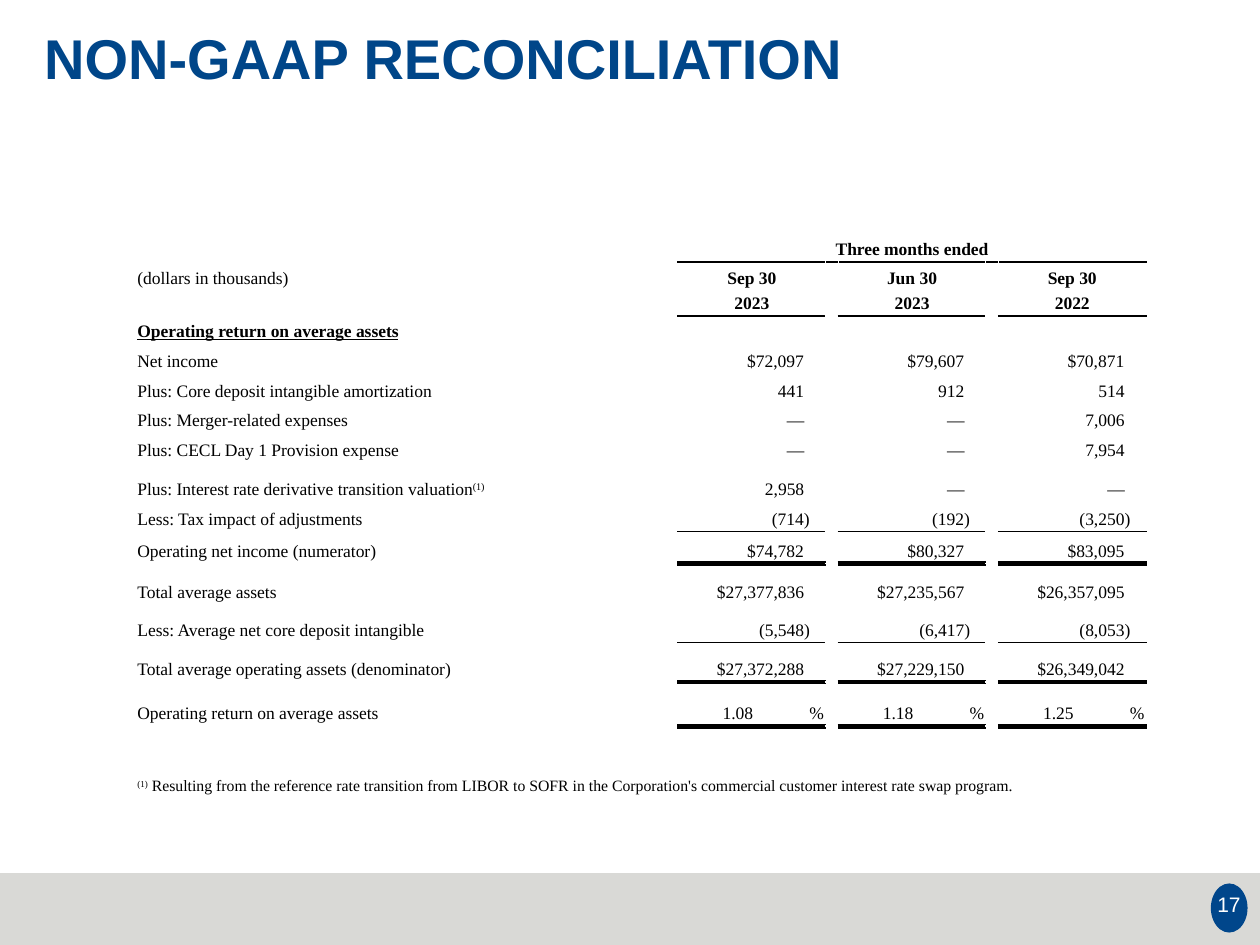
from lxml.etree import SubElement
from pptx import Presentation
from pptx.dml.color import RGBColor
from pptx.enum.shapes import MSO_SHAPE as Shape
from pptx.enum.text import MSO_ANCHOR as Anchor, PP_ALIGN as Align
from pptx.oxml.ns import qn
from pptx.util import Cm, Pt

# ---- Content: label, superscript mark, values, rule below, row height (cm)
TITLE = "NON-GAAP RECONCILIATION"
PAGE = "17"
PERIOD = "Three months ended"
UNITS = "(dollars in thousands)"
SECTION = "Operating return on average assets"
MARK = "(1)"
NOTE = (" Resulting from the reference rate transition from LIBOR to SOFR in the "
        "Corporation's commercial customer interest rate swap program.")
HEAD, SUM, TOTAL = 1, 0.75, 3  # rule widths in points
ROWS = [
    ("", "", [], HEAD, 0.56),
    (UNITS, "", ["Sep 30", "Jun 30", "Sep 30"], 0, 0.58),
    ("", "", ["2023", "2023", "2022"], HEAD, 0.51),
    (SECTION, "", [], 0, 0.56),
    ("Net income", "", ["$72,097", "$79,607", "$70,871"], 0, 0.6),
    ("Plus: Core deposit intangible amortization", "", ["441", "912", "514"], 0, 0.6),
    ("Plus: Merger-related expenses", "", ["—", "—", "7,006"], 0, 0.6),
    ("Plus: CECL Day 1 Provision expense", "", ["—", "—", "7,954"], 0, 0.6),
    ("Plus: Interest rate derivative transition valuation", MARK,
     ["2,958", "—", "—"], 0, 0.79),
    ("Less: Tax impact of adjustments", "", ["(714)", "(192)", "(3,250)"], SUM, 0.6),
    ("Operating net income (numerator)", "", ["$74,782", "$80,327", "$83,095"], TOTAL, 0.64),
    ("", "", [], 0, 0.28),
    ("Total average assets", "", ["$27,377,836", "$27,235,567", "$26,357,095"], 0, 0.56),
    ("Less: Average net core deposit intangible", "",
     ["(5,548)", "(6,417)", "(8,053)"], SUM, 0.76),
    ("Total average operating assets (denominator)", "",
     ["$27,372,288", "$27,229,150", "$26,349,042"], TOTAL, 0.79),
    ("", "", [], 0, 0.28),
    ("Operating return on average assets", "", ["1.08%", "1.18%", "1.25%"], TOTAL, 0.61),
    ("", "", [], 0, 0.58),
    ("", "", [], 0, 0.86),
]
COLUMNS = [10.98, 2.97, 0.24, 2.97, 0.1, 2.97]
HEADER_ROWS = 3
VALUE_COLUMNS = (1, 3, 5)

THEME = {
    "blue": "004689", "badge": "00468B", "band": "D9D9D6",
    "white": "FFFFFF", "black": "000000",
    "sans": "Arial", "serif": "Times New Roman",
    "title": 32, "page": 12, "table": 10, "note": 9, "empty": 4,
}


def style(run, font, size, color, bold=False):
    run.font.name = THEME[font]
    run.font.size = Pt(THEME[size])
    run.font.color.rgb = RGBColor.from_string(THEME[color])
    run.font.bold = bold


def add_block(slide, kind, color, *box):
    shape = slide.shapes.add_shape(kind, *map(Cm, box))
    shape.shadow.inherit = False
    shape.fill.solid()
    shape.fill.fore_color.rgb = RGBColor.from_string(THEME[color])
    shape.line.fill.background()


def add_text(slide, text, size, color, bold, *box):
    frame = slide.shapes.add_textbox(*map(Cm, box)).text_frame
    frame.word_wrap = True
    frame.margin_top = Cm(0.15)
    frame.margin_left = frame.margin_right = frame.margin_bottom = Cm(0.25)
    frame.text = text
    style(frame.paragraphs[0].runs[0], "sans", size, color, bold)
    return frame


def set_borders(cell, top, bottom):
    """White edges all round, with black rules where a width is given."""
    properties = cell._tc.get_or_add_tcPr()
    edges = [("a:lnL", 0), ("a:lnR", 0), ("a:lnT", top), ("a:lnB", bottom)]
    for position, (tag, width) in enumerate(edges):
        line = SubElement(properties, qn(tag), w=str(Pt(width or 1)))
        fill = SubElement(line, qn("a:solidFill"))
        SubElement(fill, qn("a:srgbClr"), val=THEME["black" if width else "white"])
        properties.insert(position, line)


def add_tabs(paragraph, stops):
    tabs = SubElement(paragraph._p.get_or_add_pPr(), qn("a:tabLst"))
    for stop in stops:
        SubElement(tabs, qn("a:tab"), pos=str(Cm(stop)), algn="l")


def fill_value(cell, value):
    """Tab to the point that lines up the last digits of the column."""
    paragraph = cell.text_frame.paragraphs[0]
    paragraph.alignment = Align.RIGHT
    cell.margin_left, cell.margin_right = 0, Cm(0.03)
    if value.endswith("%"):
        add_tabs(paragraph, (0, 0.79))
        paragraph.text = f"\t{value[:-1]}\t%"
    else:
        em = THEME["table"] * 2.54 / 72
        widths = {",": 0.25, "(": 0.33, ")": 0, "—": 1}
        start = 2.44 - em * sum(widths.get(letter, 0.5) for letter in value)
        add_tabs(paragraph, (round(start, 2), 2.84))
        paragraph.text = f"\t{value}\t"
    style(paragraph.runs[0], "serif", "table", "black")


def fill_text(cell, parts, size="table", bold=False, centered=False):
    paragraph = cell.text_frame.paragraphs[0]
    paragraph.alignment = Align.CENTER if centered else Align.LEFT
    for text in filter(None, parts):
        run = paragraph.add_run()
        run.text = text
        style(run, "serif", size, "black", bold)
        run.font.underline = text == SECTION and bold
        if text == MARK:
            run._r.get_or_add_rPr().set("baseline", "30000")


def add_reconciliation(slide):
    heights = [row[4] for row in ROWS]
    table = slide.shapes.add_table(
        len(ROWS), len(COLUMNS), Cm(2.69), Cm(4.72),
        Cm(sum(COLUMNS)), Cm(sum(heights))).table
    table.first_row = table.horz_banding = False
    for column, width in zip(table.columns, COLUMNS):
        column.width = Cm(width)
    for row, height in zip(table.rows, heights):
        row.height = Cm(height)

    # Merged header and footnote
    last = len(ROWS) - 1
    table.cell(0, 1).merge(table.cell(0, 5))
    table.cell(last, 0).merge(table.cell(last, 5))

    above = 0
    for index, (label, mark, values, rule, _) in enumerate(ROWS):
        for column in range(len(COLUMNS)):
            cell = table.cell(index, column)
            cell.fill.background()
            cell.vertical_anchor = Anchor.BOTTOM
            cell.margin_left = cell.margin_right = Cm(0.08)
            cell.margin_top, cell.margin_bottom = 0, Cm(0.05)
            ruled = column in VALUE_COLUMNS
            set_borders(cell,
                        above if ruled or (index == 1 and column) else 0,
                        rule if ruled or (index == 0 and column) else 0)
        above = rule

        fill_text(table.cell(index, 0), (label, mark), bold=index == HEADER_ROWS)
        for column, value in zip(VALUE_COLUMNS, values):
            if index < HEADER_ROWS:
                fill_text(table.cell(index, column), [value], bold=True, centered=True)
            else:
                fill_value(table.cell(index, column), value)
    fill_text(table.cell(0, 1), [PERIOD], bold=True, centered=True)
    fill_text(table.cell(last, 0), (MARK, NOTE), size="note")

    # Small type in empty cells keeps the row heights exact
    for cell in table.iter_cells():
        if not cell.text_frame.text:
            SubElement(cell.text_frame.paragraphs[0]._p, qn("a:endParaRPr"),
                       sz=str(THEME["empty"] * 100))


def main():
    presentation = Presentation()
    presentation.slide_width, presentation.slide_height = Cm(25.4), Cm(19.05)
    slide = presentation.slides.add_slide(presentation.slide_layouts[6])

    # Footer band and page badge
    add_block(slide, Shape.RECTANGLE, "band", 0, 17.6, 25.4, 1.45)
    add_block(slide, Shape.OVAL, "badge", 24.41, 17.81, 0.74, 0.99)

    # Title and page number
    title = add_text(slide, TITLE, "title", "blue", True, 0.64, 0.48, 24.56, 2.9)
    title.paragraphs[0].line_spacing = 0.9
    page = add_text(slide, PAGE, "page", "white", False, 24.18, 17.78, 1.19, 0.99)
    page.vertical_anchor = Anchor.MIDDLE
    page.paragraphs[0].alignment = Align.CENTER

    add_reconciliation(slide)
    presentation.save("out.pptx")


if __name__ == "__main__":
    main()
